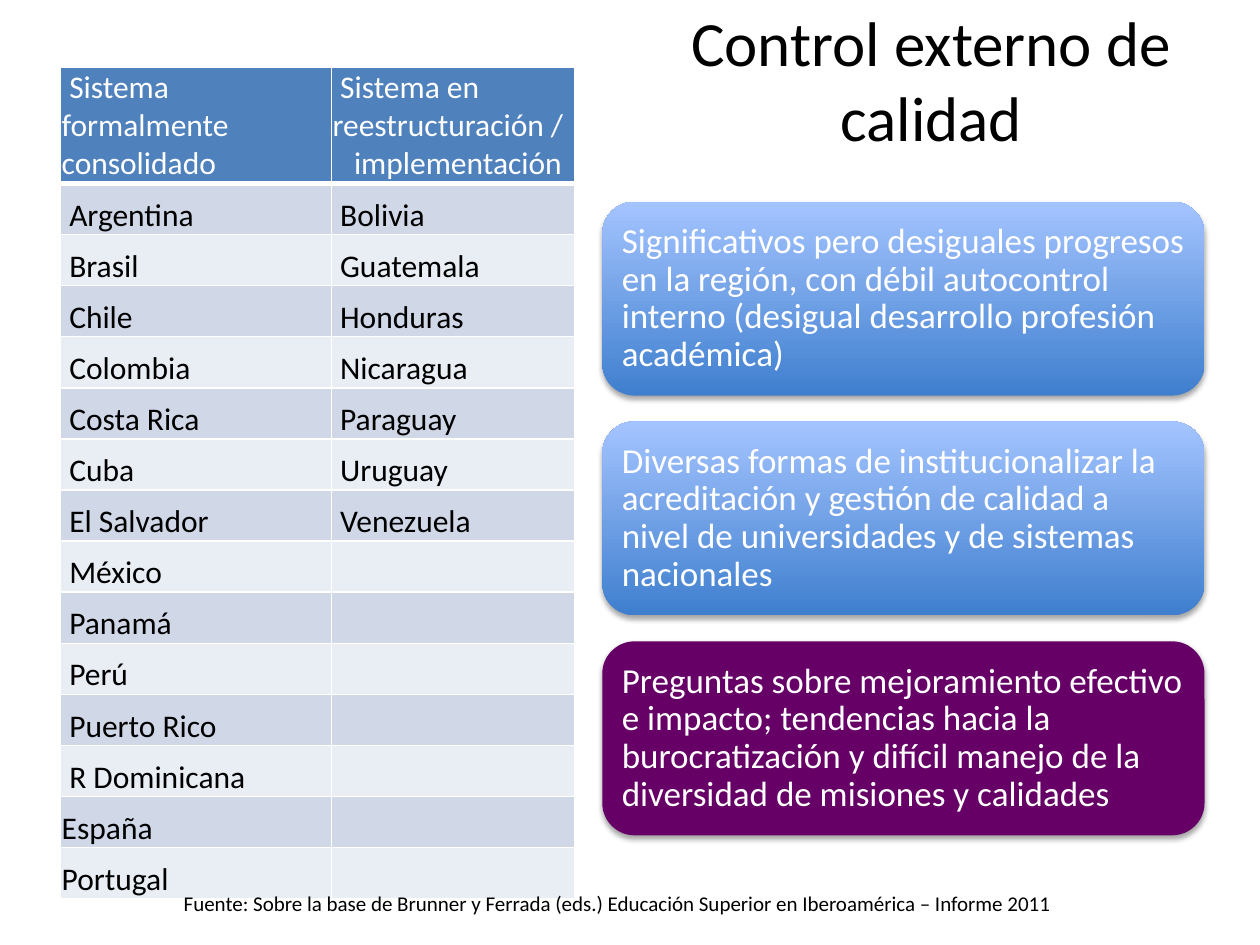
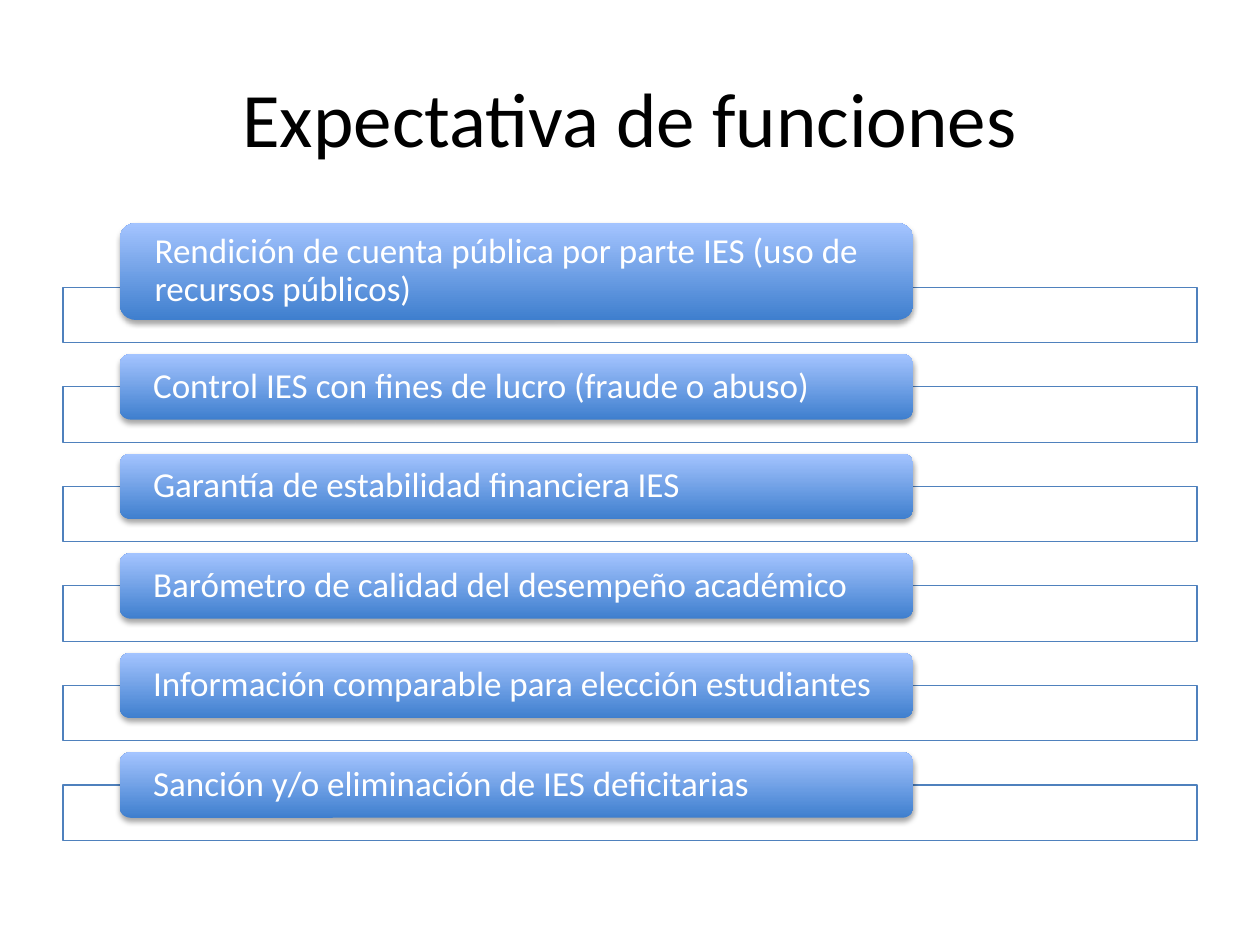
from itertools import zip_longest

from lxml import etree
from pptx import Presentation
from pptx.dml.color import RGBColor
from pptx.enum.shapes import MSO_SHAPE as Shape
from pptx.enum.text import MSO_ANCHOR as Anchor, MSO_AUTO_SIZE as AutoSize, PP_ALIGN as Align
from pptx.oxml import parse_xml
from pptx.oxml.ns import nsdecls, qn
from pptx.util import Inches, Pt

FONT = "Calibri"
BLACK = RGBColor(0x00, 0x00, 0x00)
WHITE = RGBColor(0xFF, 0xFF, 0xFF)
BLUE = RGBColor(0x4F, 0x81, 0xBD)
GRADIENT_LOW = RGBColor(0x3F, 0x7F, 0xCE)
GRADIENT_HIGH = RGBColor(0xA4, 0xC4, 0xFF)
PURPLE = RGBColor(0x66, 0x00, 0x66)
BANDS = (RGBColor(0xD0, 0xD8, 0xE8), RGBColor(0xE9, 0xED, 0xF4))
SHADOW = (f'<a:effectLst {nsdecls("a")}><a:outerShdw blurRad="40000" dist="23000" '
          'dir="5400000" rotWithShape="0"><a:srgbClr val="000000"><a:alpha val="35000"/>'
          '</a:srgbClr></a:outerShdw></a:effectLst>')

# Table entries: one (text, first-line indent, left margin) per paragraph
LEAD = 0.06
HEADINGS = ([("Sistema formalmente consolidado", LEAD, 0)],
            [("Sistema en reestructuración /", LEAD, 0), ("implementación", 0, 0.17)])
CONSOLIDATED = ["Argentina", "Brasil", "Chile", "Colombia", "Costa Rica", "Cuba",
                "El Salvador", "México", "Panamá", "Perú", "Puerto Rico",
                "R Dominicana", "España", "Portugal"]
RESTRUCTURING = ["Bolivia", "Guatemala", "Honduras", "Nicaragua", "Paraguay",
                 "Uruguay", "Venezuela"]
IBERIAN = ("España", "Portugal")

FINDINGS = [
    ("Significativos pero desiguales progresos en la región, con débil autocontrol "
     "interno (desigual desarrollo profesión académica)", None),
    ("Diversas formas de institucionalizar la acreditación y gestión de calidad a "
     "nivel de universidades y de sistemas nacionales", None),
    ("Preguntas sobre mejoramiento efectivo e impacto; tendencias hacia la "
     "burocratización y difícil manejo de la diversidad de misiones y calidades", PURPLE),
]
EXPECTATIONS = [
    "Rendición de cuenta pública por parte IES (uso de recursos públicos)",
    "Control IES con fines de lucro (fraude o abuso)",
    "Garantía de estabilidad financiera IES",
    "Barómetro de calidad del desempeño académico",
    "Información comparable para elección estudiantes",
    "Sanción y/o eliminación de IES deficitarias",
]


class Deck:
    def __init__(self):
        self.prs = Presentation()
        self.prs.slide_width, self.prs.slide_height = Inches(10), Inches(7.5)
        self.slide = None

    @staticmethod
    def style(frame, size, color):
        for paragraph in frame.paragraphs:
            for run in paragraph.runs:
                font = run.font
                font.name, font.size, font.bold = FONT, Pt(size), False
                font.color.rgb = color

    @staticmethod
    def box(left, top, width, height):
        return [Inches(value) for value in (left, top, width, height)]

    def new_slide(self, text, size, *place):
        self.slide = self.prs.slides.add_slide(self.prs.slide_layouts[5])
        title = self.slide.shapes.title
        title.left, title.top, title.width, title.height = self.box(*place)
        frame = title.text_frame
        frame.text = text
        frame.vertical_anchor = Anchor.MIDDLE
        frame.paragraphs[0].alignment = Align.CENTER
        self.style(frame, size, BLACK)

    def card(self, text, place, inset_x, inset_y, color=None):
        card = self.slide.shapes.add_shape(Shape.ROUNDED_RECTANGLE, *self.box(*place))
        if color is None:
            card.fill.gradient()
            card.fill.gradient_angle = 90
            for stop, shade in zip(card.fill.gradient_stops, (GRADIENT_LOW, GRADIENT_HIGH)):
                stop.color.rgb = shade
        else:
            card.fill.solid()
            card.fill.fore_color.rgb = color
        card.line.fill.background()
        card._element.spPr.append(parse_xml(SHADOW))
        frame = card.text_frame
        frame.text = text
        frame.word_wrap = True
        frame.vertical_anchor = Anchor.MIDDLE
        frame.margin_left = frame.margin_right = Inches(inset_x)
        frame.margin_top = frame.margin_bottom = Inches(inset_y)
        frame.paragraphs[0].alignment = Align.LEFT
        frame.paragraphs[0].line_spacing = 0.9
        self.style(frame, 20, WHITE)

    def outline(self, *place):
        outline = self.slide.shapes.add_shape(Shape.RECTANGLE, *self.box(*place))
        outline.shadow.inherit = False
        outline.fill.solid()
        outline.fill.fore_color.rgb = WHITE
        shade = outline._element.spPr.find(qn("a:solidFill"))[0]
        etree.SubElement(shade, qn("a:alpha"), val="90000")
        outline.line.color.rgb = BLUE
        outline.line.width = Pt(0.75)

    def source_note(self, text, *place):
        frame = self.slide.shapes.add_textbox(*self.box(*place)).text_frame
        frame.text = text
        frame.word_wrap = False
        frame.auto_size = AutoSize.SHAPE_TO_FIT_TEXT
        self.style(frame, 12, BLACK)

    def cell(self, cell, entries, fill, color, anchor, bottom_width):
        cell.margin_left = cell.margin_right = cell.margin_top = Inches(0.01)
        cell.margin_bottom = 0
        cell.vertical_anchor = anchor
        cell.fill.solid()
        cell.fill.fore_color.rgb = fill
        frame = cell.text_frame
        frame.text = "\n".join(text for text, _, _ in entries)
        for paragraph, (_, indent, margin) in zip(frame.paragraphs, entries):
            properties = paragraph._p.get_or_add_pPr()
            properties.set("marL", str(Inches(margin)))
            properties.set("indent", str(Inches(indent)))
        self.style(frame, 18, color)
        for position, side in enumerate("LRTB"):
            width = Pt(bottom_width if side == "B" else 1)
            cell._tc.get_or_add_tcPr().insert(position, parse_xml(
                f'<a:ln{side} {nsdecls("a")} w="{width}"><a:solidFill>'
                f'<a:srgbClr val="{WHITE}"/></a:solidFill></a:ln{side}>'))

    def table(self, headings, rows, place, widths, header_height):
        table = self.slide.shapes.add_table(len(rows) + 1, len(widths), *self.box(*place)).table
        for column, width in zip(table.columns, widths):
            column.width = Inches(width)
        row_height = (place[3] - header_height) / len(rows)
        for number, row in enumerate(table.rows):
            row.height = Inches(row_height if number else header_height)
        for column, entries in enumerate(headings):
            self.cell(table.cell(0, column), entries, BLUE, WHITE, Anchor.MIDDLE, 3)
        for number, row in enumerate(rows):
            for column, name in enumerate(row):
                indent = 0 if name in IBERIAN else LEAD
                self.cell(table.cell(number + 1, column), [(name, indent, 0)],
                          BANDS[number % 2], BLACK, Anchor.BOTTOM, 1)


def quality_control(deck):
    deck.new_slide("Control externo de calidad", 36, 4.78, 0, 5.22, 1.25)

    # Countries by state of their system
    countries = list(zip_longest(CONSOLIDATED, RESTRUCTURING, fillvalue=""))
    deck.table(HEADINGS, countries, (0.48, 0.53, 4.08, 6.59), (2.15, 1.93), 0.91)

    # Findings
    for number, (finding, color) in enumerate(FINDINGS):
        top = 1.6 + 1.745 * number
        deck.card(finding, (4.78, top, 4.78, 1.54), 0.08, 0.08, color)

    deck.source_note("Fuente: Sobre la base de Brunner y Ferrada (eds.) Educación Superior "
                     "en Iberoamérica – Informe 2011", 1.36, 7.02, 7.17, 0.3)


def expected_functions(deck):
    deck.new_slide("Expectativa de funciones", 44, 0.5, 0.3, 9, 1.25)

    # Each label overlaps the top of its outline; the first has two lines
    for number, expectation in enumerate(EXPECTATIONS):
        outline_top = 2.28 + 0.79 * number
        label_height = 0.52 if number else 0.77
        deck.outline(0.5, outline_top, 9, 0.44)
        deck.card(expectation, (0.95, outline_top + 0.26 - label_height, 6.3, label_height),
                  0.24, 0)


def main():
    deck = Deck()
    quality_control(deck)
    expected_functions(deck)
    deck.prs.save("out.pptx")


if __name__ == "__main__":
    main()
